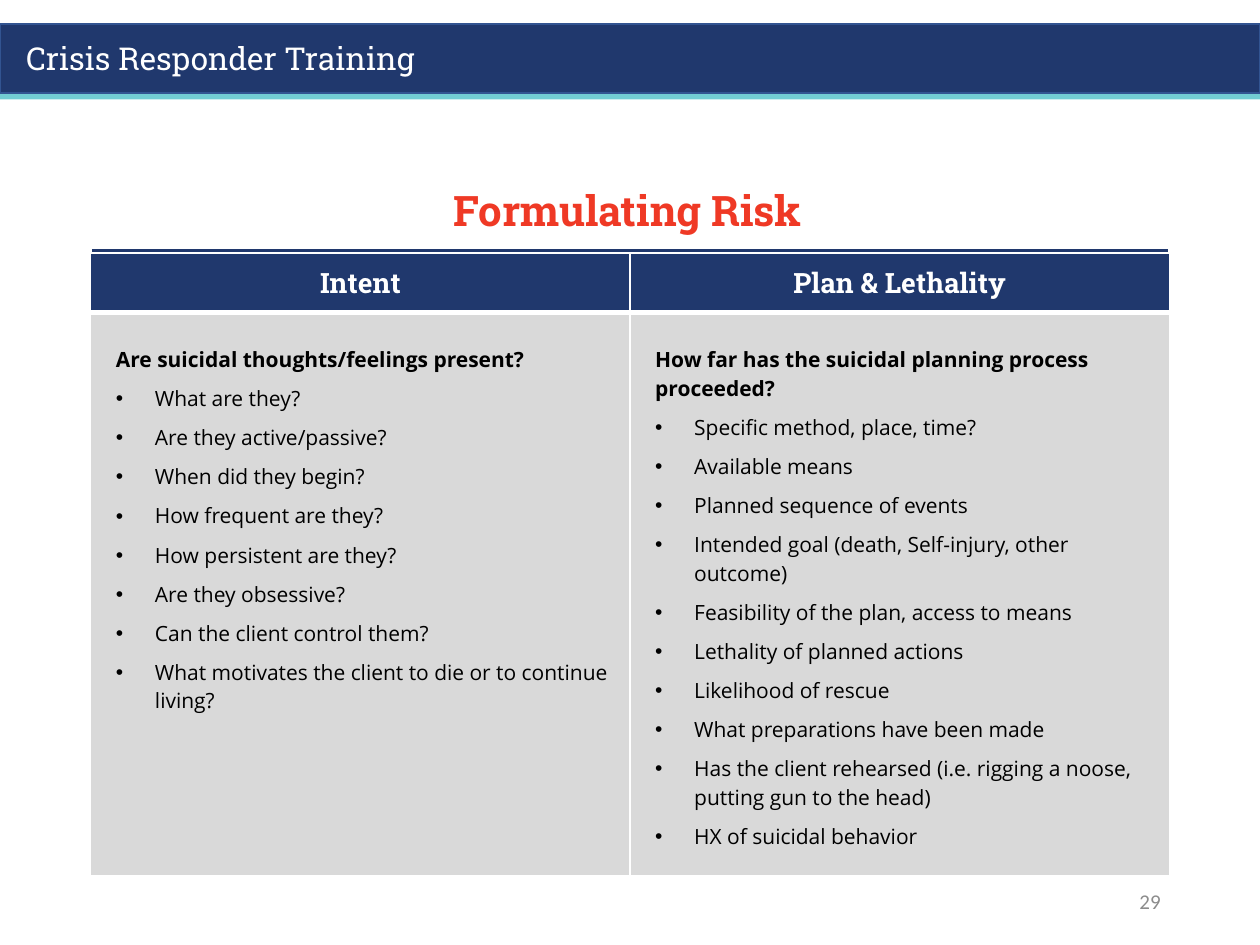
"""Build the Formulating Risk slide of a crisis responder course."""
import lxml.etree
import pptx
import pptx.dml.color
import pptx.enum.shapes
import pptx.enum.text
import pptx.oxml.ns
import pptx.util

NAVY = pptx.dml.color.RGBColor(0x20, 0x38, 0x6D)
NAVY_EDGE = pptx.dml.color.RGBColor(0x32, 0x54, 0x91)
TEAL = pptx.dml.color.RGBColor(0x72, 0xCC, 0xD2)
RED = pptx.dml.color.RGBColor(0xEF, 0x39, 0x25)
GRAY = pptx.dml.color.RGBColor(0x8C, 0x8C, 0x8C)
PALE = pptx.dml.color.RGBColor(0xD9, 0xD9, 0xD9)
WHITE = pptx.dml.color.RGBColor(0xFF, 0xFF, 0xFF)
BLACK = pptx.dml.color.RGBColor(0, 0, 0)

LEFT = pptx.enum.text.PP_ALIGN.LEFT
CENTER = pptx.enum.text.PP_ALIGN.CENTER
RIGHT = pptx.enum.text.PP_ALIGN.RIGHT
TOP = pptx.enum.text.MSO_ANCHOR.TOP
MIDDLE = pptx.enum.text.MSO_ANCHOR.MIDDLE

deck = pptx.Presentation()
deck.slide_width = pptx.util.Inches(10)
deck.slide_height = pptx.util.Inches(7.5)
COLUMN = deck.slide_width / 100
ROW = deck.slide_height / 75
page = deck.slides.add_slide(deck.slide_layouts[6])


def place(left, top, width, height):
    """Turn grid columns and rows into slide lengths."""
    return [int(left * COLUMN), int(top * ROW), int(width * COLUMN), int(height * ROW)]


def write(para, words, size, font, color, bold=False, align=LEFT):
    """Add one styled run to a paragraph."""
    para.alignment = align
    span = para.add_run()
    span.text = words
    span.font.size = pptx.util.Pt(size)
    span.font.name = font
    span.font.bold = bold
    span.font.color.rgb = color


for top, height, fill, edge in [(4.8, 3.1, TEAL, None), (1.9, 5.5, NAVY, NAVY_EDGE)]:
    band = page.shapes.add_shape(
        pptx.enum.shapes.MSO_SHAPE.RECTANGLE, *place(0, top, 100, height))
    band.shadow.inherit = False
    band.fill.solid()
    band.fill.fore_color.rgb = fill
    if edge is None:
        band.line.fill.background()
    else:
        band.line.color.rgb = edge
        band.line.width = pptx.util.Pt(1)

LABELS = [
    ((1.1, 2.6, 37, 4), TOP, 1, ("Crisis Responder Training", 18, "Roboto Slab", WHITE)),
    ((6.7, 13.4, 86.2, 6.9), MIDDLE, 0.9,
     ("Formulating Risk", 24, "Roboto Slab", RED, True, CENTER)),
    ((70.6, 69.5, 22.5, 4), MIDDLE, 1, ("29", 12, "Calibri", GRAY, False, RIGHT)),
]
for area, anchor, spacing, style in LABELS:
    box = page.shapes.add_textbox(*place(*area))
    box.text_frame.word_wrap = True
    box.text_frame.vertical_anchor = anchor
    para = box.text_frame.paragraphs[0]
    para.line_spacing = spacing
    write(para, *style)

TOPICS = [
    ("Intent", "Are suicidal thoughts/feelings present?", [
        "What are they?",
        "Are they active/passive?",
        "When did they begin?",
        "How frequent are they?",
        "How persistent are they?",
        "Are they obsessive?",
        "Can the client control them?",
        "What motivates the client to die or to continue living?",
    ]),
    ("Plan & Lethality", "How far has the suicidal planning process proceeded?", [
        "Specific method, place, time?",
        "Available means",
        "Planned sequence of events",
        "Intended goal (death, Self-injury, other outcome)",
        "Feasibility of the plan, access to means",
        "Lethality of planned actions",
        "Likelihood of rescue",
        "What preparations have been made",
        "Has the client rehearsed (i.e. rigging a noose, putting gun to the head)",
        "HX of suicidal behavior",
    ]),
]
qn = pptx.oxml.ns.qn
table = page.shapes.add_table(2, 2, *place(7.2, 20.1, 85.6, 49.4)).table
table.horz_banding = False
table.rows[0].height = int(4.7 * ROW)
table.rows[1].height = int(44.7 * ROW)

for column, (heading, question, points) in enumerate(TOPICS):
    table.columns[column].width = int(42.8 * COLUMN)
    for row, fill, inset, head_room, thick in [
            (0, NAVY, 0.7, 0.4, "lnB"), (1, PALE, 2, 2.6, "lnT")]:
        cell = table.cell(row, column)
        cell.margin_left = int(inset * COLUMN)
        cell.margin_right = int(0.7 * COLUMN)
        cell.margin_top = int(head_room * ROW)
        cell.margin_bottom = int(0.4 * ROW)
        properties = cell._tc.get_or_add_tcPr()
        for side in ("lnL", "lnR", "lnT", "lnB"):
            border = lxml.etree.SubElement(properties, qn("a:" + side))
            border.set("w", str(pptx.util.Pt(3 if side == thick else 1)))
            paint = lxml.etree.SubElement(border, qn("a:solidFill"))
            lxml.etree.SubElement(paint, qn("a:srgbClr")).set("val", str(WHITE))
        cell.fill.solid()
        cell.fill.fore_color.rgb = fill

    header, body = table.cell(0, column), table.cell(1, column)
    header.vertical_anchor = MIDDLE
    write(header.text_frame.paragraphs[0], heading, 16, "Roboto Slab", WHITE, True, CENTER)
    write(body.text_frame.paragraphs[0], question, 12, "Open Sans", BLACK, True)
    for point in points:
        para = body.text_frame.add_paragraph()
        layout = para._p.get_or_add_pPr()
        layout.set("marL", str(int(3.1 * COLUMN)))
        layout.set("indent", str(int(-3.1 * COLUMN)))
        lxml.etree.SubElement(layout, qn("a:buFont")).set("typeface", "Arial")
        lxml.etree.SubElement(layout, qn("a:buChar")).set("char", "•")
        para.space_before = pptx.util.Pt(6)
        write(para, point, 12, "Open Sans", BLACK)

start_x, start_y, length, drop = place(7.3, 19.9, 85.4, 0)
rule = page.shapes.add_connector(
    pptx.enum.shapes.MSO_CONNECTOR.STRAIGHT,
    start_x, start_y, start_x + length, start_y + drop)
rule.line.color.rgb = NAVY
rule.line.width = pptx.util.Pt(1.5)
lxml.etree.SubElement(rule._element.spPr, qn("a:effectLst"))

deck.save("out.pptx")
